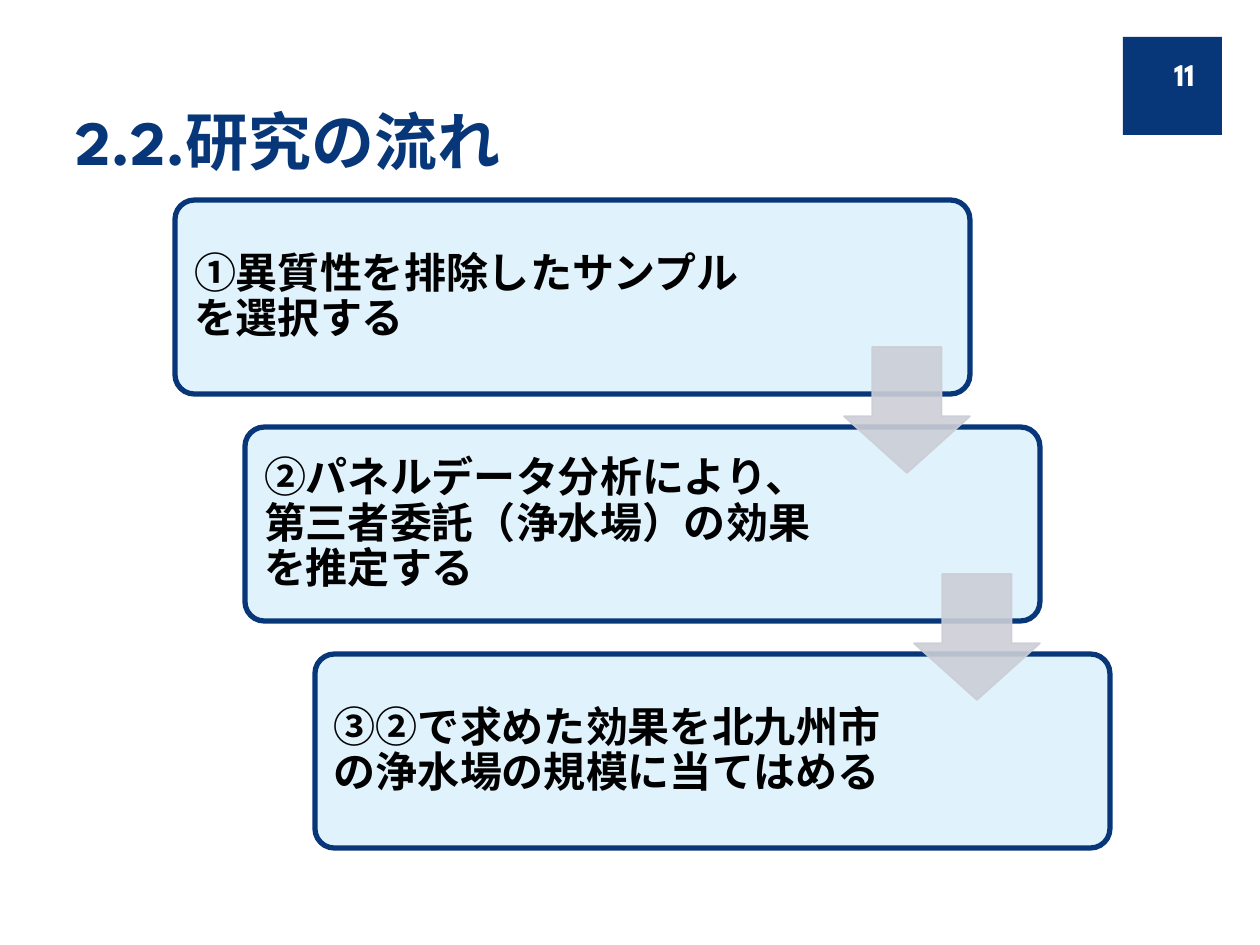
from lxml.etree import SubElement
from pptx import Presentation
from pptx.dml.color import RGBColor
from pptx.enum.shapes import MSO_SHAPE as Kind
from pptx.enum.text import MSO_ANCHOR as Anchor, MSO_AUTO_SIZE as Fit, PP_ALIGN as Align
from pptx.oxml.ns import qn
from pptx.util import Pt

SCALE = 914400 / 126  # EMU per px
NAVY, PALE, GREY = "073779", "E0F2FB", "CCCED7"
STEPS = [
    "①異質性を排除したサンプルを選択する",
    "②パネルデータ分析により、第三者委託（浄水場）の効果を推定する",
    "③②で求めた効果を北九州市の浄水場の規模に当てはめる",
]


def px(n):
    return round(n * SCALE)


def rgb(code):
    return RGBColor.from_string(code)


class Deck:
    font = "League Spartan"

    def __init__(self, wide, high):
        self.prs = Presentation()
        self.prs.slide_width, self.prs.slide_height = px(wide), px(high)
        self.slide = self.prs.slides.add_slide(self.prs.slide_layouts[5])

    def fill_text(self, frame, text, size, color, anchor, align=Align.LEFT, space=1.0):
        frame.word_wrap = True
        frame.auto_size = Fit.NONE
        frame.vertical_anchor = anchor
        para = frame.paragraphs[0]
        para.alignment, para.line_spacing = align, space
        run = para.add_run()
        run.text = text
        font = run.font
        font.name, font.size, font.bold = self.font, Pt(size), True
        font.color.rgb = rgb(color)

    def title(self, text, x, y, w, h):
        box = self.slide.shapes.title
        box.left, box.top, box.width, box.height = map(px, (x, y, w, h))
        self.fill_text(box.text_frame, text, 36, NAVY, Anchor.BOTTOM)

    def text(self, text, x, y, w, h, size, color, pad=None, **style):
        box = self.slide.shapes.add_textbox(*map(px, (x, y, w, h)))
        frame = box.text_frame
        if pad is not None:
            frame.margin_left = frame.margin_right = px(pad)
            frame.margin_top = frame.margin_bottom = px(pad)
        self.fill_text(frame, text, size, color, Anchor.MIDDLE, **style)

    def shape(self, kind, x, y, w, h, fill, line=None, width=1, adjust=(), alpha=None):
        shape = self.slide.shapes.add_shape(kind, *map(px, (x, y, w, h)))
        shape.shadow.inherit = False
        for i, value in enumerate(adjust):
            shape.adjustments[i] = value
        shape.fill.solid()
        shape.fill.fore_color.rgb = rgb(fill)
        if line:
            shape.line.color.rgb = rgb(line)
            shape.line.width = Pt(width)
        else:
            shape.line.fill.background()
        if alpha:
            for tone in shape.element.spPr.iter(qn("a:srgbClr")):
                SubElement(tone, qn("a:alpha"), val=str(alpha * 1000))


def main():
    deck = Deck(1260, 945)

    # Page number and title
    deck.shape(Kind.RECTANGLE, 1123, 37, 99, 98, NAVY)
    deck.title("2.2.研究の流れ", 63, 106, 897, 78)
    deck.text("11", 1138, 49, 69, 50, 18, "FFFFFF", align=Align.RIGHT)

    # Steps, each one further right and down
    spots = [(175 + 70 * i, 200 + 227 * i) for i in range(len(STEPS))]
    for (x, y), step in zip(spots, STEPS):
        deck.shape(Kind.ROUNDED_RECTANGLE, x, y, 795, 194, PALE, NAVY, 3, [0.1])
        deck.text(step, x + 6, y + 6, 588, 183, 24, "000000", pad=13, space=0.9)

    # Arrows from each step to the next
    for x, y in spots[:-1]:
        deck.shape(Kind.DOWN_ARROW, x + 669, y + 147, 126, 126, GREY, GREY, 1,
                   [0.55, 0.45], alpha=90)

    deck.prs.save("out.pptx")


if __name__ == "__main__":
    main()
